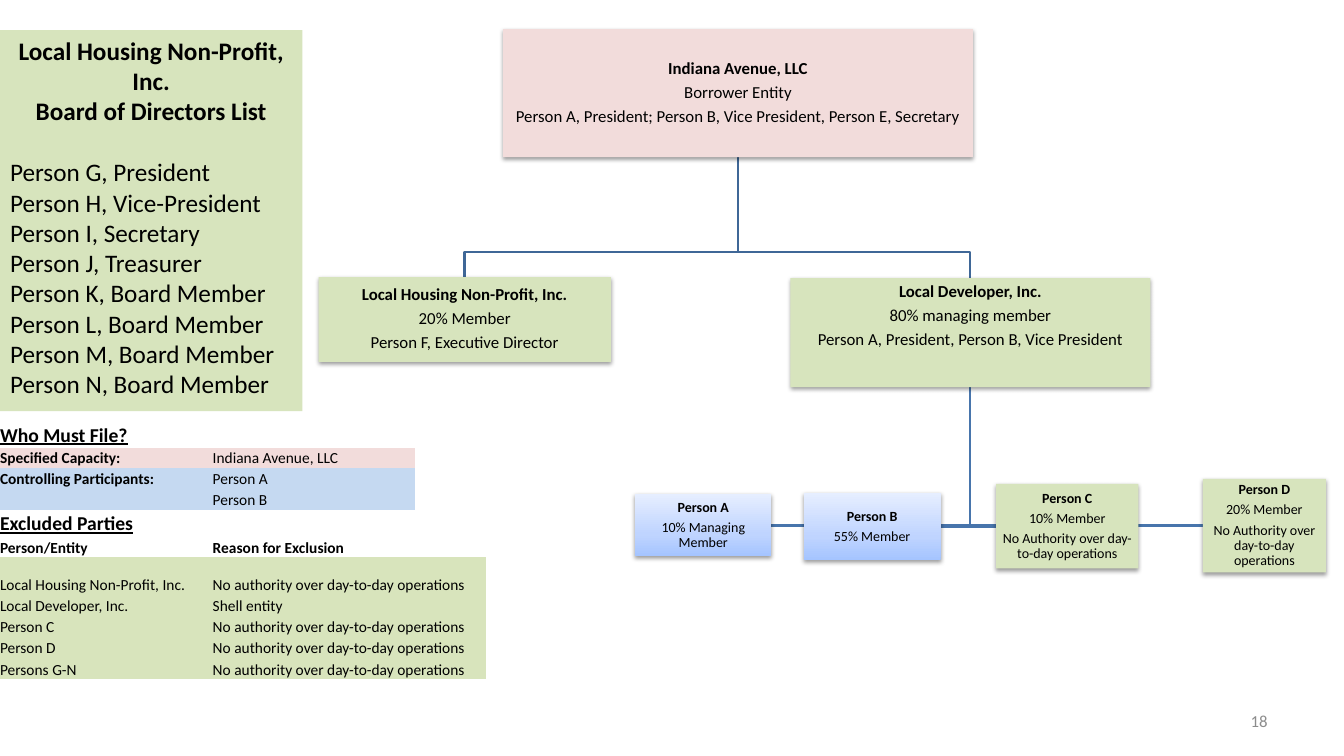
from copy import deepcopy
from dataclasses import dataclass

from lxml import etree
from pptx import Presentation
from pptx.dml.color import RGBColor
from pptx.enum.shapes import MSO_SHAPE
from pptx.enum.text import MSO_ANCHOR, MSO_AUTO_SIZE, PP_ALIGN
from pptx.oxml.ns import qn
from pptx.util import Emu, Pt

RECTANGLE = MSO_SHAPE.RECTANGLE
MIDDLE, BOTTOM, TOP = MSO_ANCHOR.MIDDLE, MSO_ANCHOR.BOTTOM, MSO_ANCHOR.TOP
LEFT, CENTER, RIGHT = PP_ALIGN.LEFT, PP_ALIGN.CENTER, PP_ALIGN.RIGHT
NO_AUTOFIT = MSO_AUTO_SIZE.NONE

EMU_PER_PX = 9144  # 100 px to the inch
FONT = "Calibri"
BLACK, GREY = "000000", "8C8C8C"
PINK, GREEN, BLUE, TABLE_GREEN = "F2DCDB", "D7E4BD", "C5D9F1", "D8E4BC"
OWNER_LINE, PERSON_LINE = "3F6797", "4875AC"
BLUE_GRADIENT = ((0, "A4C4FF"), (0.35, "BFD4FF"), (1, "E6EEFF"))
NO_TABLE_STYLE = "{2D5ABB26-0587-4C30-8999-92F81FD0307C}"
OWNER_BEND = 250


@dataclass(frozen=True)
class Party:
    x: int
    y: int
    w: int
    h: int
    lines: tuple[str, ...]
    fill: str | None = GREEN  # None means the blue gradient
    size: int = 12
    inset_bottom: int = 1

    @property
    def center(self) -> int:
        return self.x + self.w // 2

    @property
    def middle(self) -> int:
        return self.y + self.h // 2

    @property
    def bottom(self) -> int:
        return self.y + self.h


@dataclass(frozen=True)
class FilingRow:
    height: int
    label: str = ""
    detail: str = ""
    fill: str | None = None
    last_filled: int = 3
    merge_to: int = 0
    size: int = 11
    bold_label: bool = False
    bold_detail: bool = False
    underline: bool = False


BORROWER = Party(499, 29, 466, 127, (
    "Indiana Avenue, LLC", "Borrower Entity",
    "Person A, President; Person B, Vice President, Person E, Secretary"), PINK)
NON_PROFIT = Party(316, 275, 290, 84, (
    "Local Housing Non-Profit, Inc.", "20% Member", "Person F, Executive Director"))
DEVELOPER = Party(784, 276, 357, 108, (
    "Local Developer, Inc.", "80% managing member",
    "Person A, President, Person B, Vice President"), inset_bottom=34)
NO_AUTHORITY = "No Authority over day-to-day operations"
PERSONS = (
    Party(630, 490, 135, 62, ("Person A", "10% Managing Member"), None, 10),
    Party(797, 489, 136, 67, ("Person B", "55% Member"), None, 10),
    Party(988, 480, 141, 84, ("Person C", "10% Member", NO_AUTHORITY), size=10),
    Party(1193, 475, 122, 93, ("Person D", "20% Member", NO_AUTHORITY), size=10),
)

BOARD_HEADING = ("Local Housing Non-Profit, Inc.", "Board of Directors List")
BOARD = (
    "Person G, President", "Person H, Vice-President", "Person I, Secretary",
    "Person J, Treasurer", "Person K, Board Member", "Person L, Board Member",
    "Person M, Board Member", "Person N, Board Member",
)

COLUMN_WIDTHS = (211, 67, 67, 67, 70)
EXCLUSION_REASON = "No authority over day-to-day operations"
EXCLUDED = (
    ("Local Housing Non-Profit, Inc.", EXCLUSION_REASON, 37),
    ("Local Developer, Inc.", "Shell entity", 21),
    ("Person C", EXCLUSION_REASON, 21),
    ("Person D", EXCLUSION_REASON, 21),
    ("Persons G-N", EXCLUSION_REASON, 21),
)
FILING_ROWS = (
    FilingRow(26, "Who Must File?", size=14, bold_label=True, underline=True),
    FilingRow(20, "Specified Capacity:", "Indiana Avenue, LLC", PINK, merge_to=3, bold_label=True),
    FilingRow(21, "Controlling Participants:", "Person A", BLUE, bold_label=True),
    FilingRow(21, "", "Person B", BLUE),
    FilingRow(26, "Excluded Parties", size=14, bold_label=True, underline=True),
    FilingRow(21, "Person/Entity", "Reason for Exclusion", merge_to=3,
              bold_label=True, bold_detail=True),
    *(FilingRow(height, party, reason, TABLE_GREEN, last_filled=4, merge_to=4)
      for party, reason, height in EXCLUDED),
)


def px(length: int) -> Emu:
    return Emu(length * EMU_PER_PX)


def rgb(color: str) -> RGBColor:
    return RGBColor.from_string(color)


def write(paragraph, text: str, *, size: int, bold=False, underline=False, color=BLACK,
          align=LEFT, line_spacing=1.0, after=0.0) -> None:
    paragraph.alignment = align
    paragraph.line_spacing = line_spacing
    paragraph.space_before = Pt(0)
    paragraph.space_after = Pt(after)
    run = paragraph.add_run()
    run.text = text
    font = run.font
    font.name, font.size, font.bold, font.underline = FONT, Pt(size), bold, underline
    font.color.rgb = rgb(color)


def next_paragraph(frame, index: int):
    return frame.add_paragraph() if index else frame.paragraphs[0]


def fill_with_gradient(shape) -> None:
    shape.fill.gradient()
    shape.fill.gradient_angle = 90
    stop_list = shape._element.spPr.find(qn("a:gradFill")).find(qn("a:gsLst"))
    stop_list.insert(1, deepcopy(stop_list[0]))
    for stop, (position, color) in zip(shape.fill.gradient_stops, BLUE_GRADIENT):
        stop.color.rgb = rgb(color)
        stop.position = position


def add_soft_shadow(shape) -> None:
    shape.shadow.inherit = False
    effects = shape._element.spPr.find(qn("a:effectLst"))
    shadow = etree.SubElement(effects, qn("a:outerShdw"), blurRad="40000", dist="20000",
                              dir="5400000", rotWithShape="0")
    color = etree.SubElement(shadow, qn("a:srgbClr"), val=BLACK)
    etree.SubElement(color, qn("a:alpha"), val="38000")


def draw_party(shapes, party: Party) -> None:
    box = shapes.add_shape(RECTANGLE, px(party.x), px(party.y), px(party.w), px(party.h))
    if party.fill:
        box.fill.solid()
        box.fill.fore_color.rgb = rgb(party.fill)
    else:
        fill_with_gradient(box)
    box.line.fill.background()
    add_soft_shadow(box)
    frame = box.text_frame
    frame.word_wrap = True
    frame.vertical_anchor = MIDDLE
    frame.margin_left = frame.margin_right = frame.margin_top = px(1)
    frame.margin_bottom = px(party.inset_bottom)
    for index, line in enumerate(party.lines):
        write(next_paragraph(frame, index), line, size=party.size, bold=index == 0,
              align=CENTER, line_spacing=0.9, after=party.size * 0.35)


def draw_link(shapes, points: list[tuple[int, int]], color: str) -> None:
    start, *corners = [(px(x), px(y)) for x, y in points]
    builder = shapes.build_freeform(*start)
    builder.add_line_segments(corners, close=False)
    link = builder.convert_to_shape()
    link.fill.background()
    link.line.color.rgb = rgb(color)
    link.line.width = Pt(2)
    link.shadow.inherit = False


def draw_links(shapes) -> None:
    trunk = DEVELOPER.center
    for person in PERSONS:
        side = person.x if person.x > trunk else person.x + person.w
        draw_link(shapes, [(trunk, DEVELOPER.bottom), (trunk, person.middle),
                           (side, person.middle)], PERSON_LINE)
    for member in (DEVELOPER, NON_PROFIT):
        draw_link(shapes, [(BORROWER.center, BORROWER.bottom), (BORROWER.center, OWNER_BEND),
                           (member.center, OWNER_BEND), (member.center, member.y)], OWNER_LINE)


def draw_board(panel) -> None:
    panel.left, panel.top, panel.width, panel.height = px(0), px(30), px(300), px(378)
    panel.fill.solid()
    panel.fill.fore_color.rgb = rgb(GREEN)
    frame = panel.text_frame
    frame.auto_size = NO_AUTOFIT
    frame.word_wrap = True
    frame.vertical_anchor = TOP
    for index, line in enumerate(BOARD_HEADING + BOARD):
        heading = index < len(BOARD_HEADING)
        paragraph = next_paragraph(frame, index)
        properties = paragraph._p.get_or_add_pPr()
        properties.set("marL", "0")
        properties.set("indent", "0")
        etree.SubElement(properties, qn("a:buNone"))
        write(paragraph, line, size=18, bold=heading, align=CENTER if heading else LEFT,
              after=22 if line == BOARD_HEADING[-1] else 0)


def draw_filing_table(shapes) -> None:
    table = shapes.add_table(len(FILING_ROWS), len(COLUMN_WIDTHS), px(0), px(418),
                             px(sum(COLUMN_WIDTHS)),
                             px(sum(row.height for row in FILING_ROWS))).table
    table.first_row = table.horz_banding = False
    table._tbl.tblPr.find(qn("a:tableStyleId")).text = NO_TABLE_STYLE
    for column, width in zip(table.columns, COLUMN_WIDTHS):
        column.width = px(width)
    for r, row in enumerate(FILING_ROWS):
        table.rows[r].height = px(row.height)
        contents = {0: (row.label, row.bold_label), 1: (row.detail, row.bold_detail)}
        for c in range(len(COLUMN_WIDTHS)):
            cell = table.cell(r, c)
            cell.margin_left = cell.margin_right = cell.margin_top = cell.margin_bottom = 0
            cell.vertical_anchor = BOTTOM
            if row.fill and c <= row.last_filled:
                cell.fill.solid()
                cell.fill.fore_color.rgb = rgb(row.fill)
            else:
                cell.fill.background()
            paragraph = cell.text_frame.paragraphs[0]
            text, bold = contents.get(c, ("", False))
            if text:
                write(paragraph, text, size=row.size, bold=bold, underline=row.underline)
            else:
                paragraph._p.get_or_add_endParaRPr().set("sz", "1100")
        if row.merge_to:
            table.cell(r, 1).merge(table.cell(r, row.merge_to))


def draw_page_number(shapes) -> None:
    frame = shapes.add_textbox(px(956), px(695), px(311), px(40)).text_frame
    frame.word_wrap = True
    frame.vertical_anchor = MIDDLE
    write(frame.paragraphs[0], "18", size=12, color=GREY, align=RIGHT)


def main() -> None:
    deck = Presentation()
    deck.slide_width, deck.slide_height = px(1333), px(750)
    slide = deck.slides.add_slide(deck.slide_layouts[1])
    shapes = slide.shapes
    empty_title = shapes.title._element
    empty_title.getparent().remove(empty_title)
    draw_board(slide.placeholders[1])
    draw_page_number(shapes)
    draw_links(shapes)
    for party in (BORROWER, NON_PROFIT, DEVELOPER, *PERSONS):
        draw_party(shapes, party)
    draw_filing_table(shapes)
    deck.save("out.pptx")


if __name__ == "__main__":
    main()
